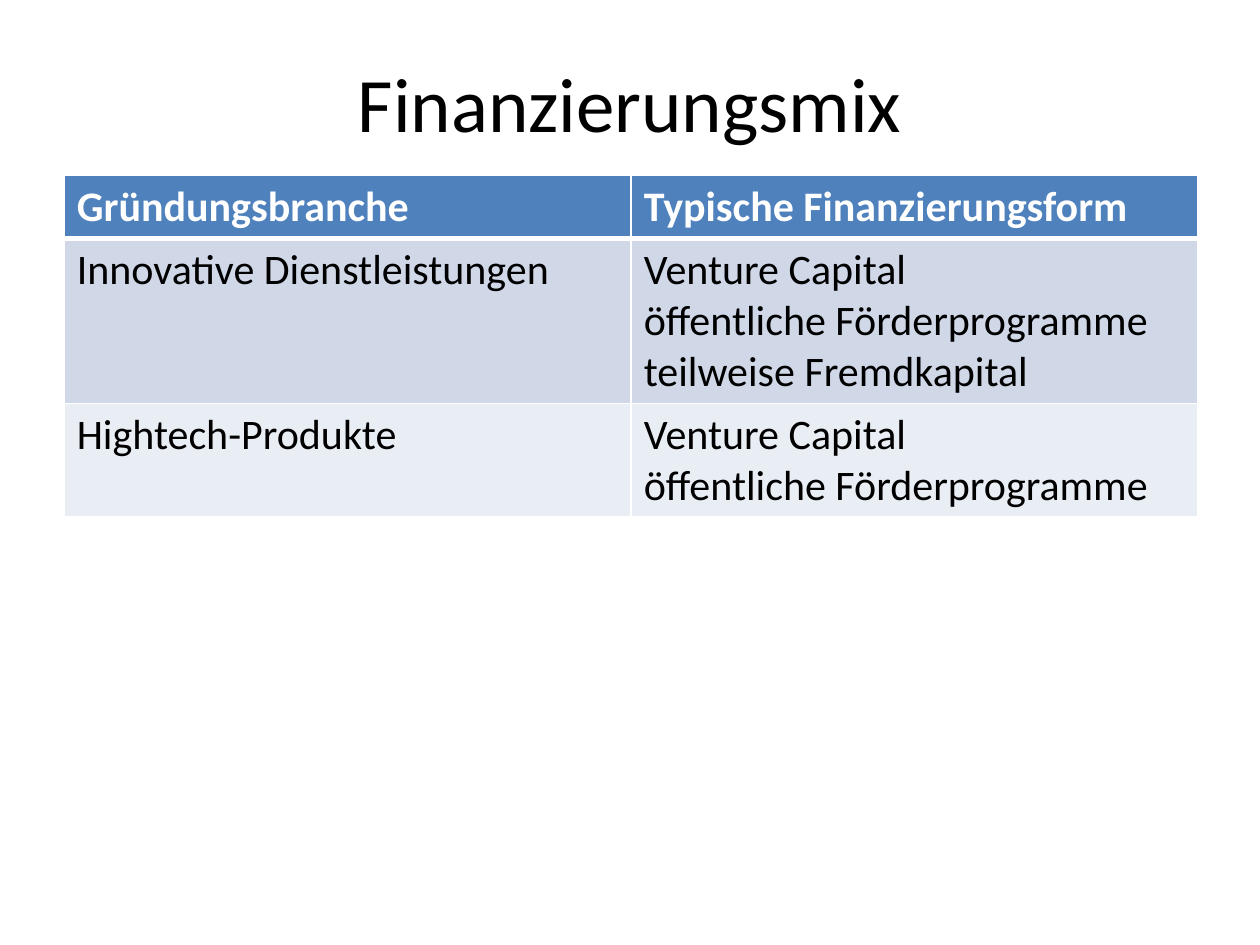
from dataclasses import dataclass

from lxml import etree
from pptx import Presentation, util as u
from pptx.dml.color import RGBColor
from pptx.enum import text
from pptx.oxml.ns import qn


@dataclass(frozen=True)
class Theme:
    font: str = "Calibri"
    title: int = 44
    body: int = 24
    dark: str = "000000"
    light: str = "FFFFFF"
    head: str = "4F81BD"
    bands: tuple = ("D0D8E8", "E9EDF4")
    thin: int = 1
    thick: int = 3


@dataclass(frozen=True)
class Row:
    branch: str
    forms: tuple
    height: float


THEME = Theme()
WIDE, HIGH = u.Inches(10), u.Inches(7.5)
ROWS = (
    Row("Gründungsbranche", ("Typische Finanzierungsform",), 0.49),
    Row(
        "Innovative Dienstleistungen",
        ("Venture Capital", "öffentliche Förderprogramme", "teilweise Fremdkapital"),
        1.31,
    ),
    Row("Hightech-Produkte", ("Venture Capital", "öffentliche Förderprogramme"), 0.9),
)


def style(frame, size: int, color: str, bold: bool = False) -> None:
    for para in frame.paragraphs:
        for run in para.runs:
            font = run.font
            font.name, font.size, font.bold = THEME.font, u.Pt(size), bold
            font.color.rgb = RGBColor.from_string(color)


def edge(cell, side: str, width: int) -> None:
    """Add one border; the sides must come in the order L, R, T, B."""
    props = cell._tc.get_or_add_tcPr()
    line = etree.SubElement(props, qn(f"a:ln{side}"), w=str(u.Pt(width)))
    fill = etree.SubElement(line, qn("a:solidFill"))
    etree.SubElement(fill, qn("a:srgbClr"), val=THEME.light)


def draw_title(slide, words: str) -> None:
    box = slide.shapes.add_textbox(
        int(WIDE * 0.05), int(HIGH * 0.04), int(WIDE * 0.9), u.Inches(1.01)
    )
    frame = box.text_frame
    frame.word_wrap = True
    frame.vertical_anchor = text.MSO_ANCHOR.MIDDLE
    frame.text = words
    frame.paragraphs[0].alignment = text.PP_ALIGN.CENTER
    style(frame, THEME.title, THEME.dark)


def draw_cell(cell, words: str, row: int) -> None:
    head = row == 0
    cell.text_frame.text = words
    style(cell.text_frame, THEME.body, THEME.light if head else THEME.dark, head)
    widths = {
        "L": THEME.thin,
        "R": THEME.thin,
        "T": THEME.thick if row == 1 else THEME.thin,
        "B": THEME.thick if head else THEME.thin,
    }
    for side, width in widths.items():
        edge(cell, side, width)
    band = THEME.head if head else THEME.bands[(row - 1) % len(THEME.bands)]
    cell.fill.solid()
    cell.fill.fore_color.rgb = RGBColor.from_string(band)


def draw_table(slide, rows: tuple[Row, ...]) -> None:
    high = u.Inches(sum(row.height for row in rows))
    table = slide.shapes.add_table(
        len(rows), 2, u.Inches(0.51), u.Inches(1.39), int(WIDE * 0.9), high
    ).table
    for i, row in enumerate(rows):
        table.rows[i].height = u.Inches(row.height)
        for j, words in enumerate((row.branch, "\n".join(row.forms))):
            draw_cell(table.cell(i, j), words, i)


def main() -> None:
    deck = Presentation()
    deck.slide_width, deck.slide_height = WIDE, HIGH
    slide = deck.slides.add_slide(deck.slide_layouts[6])
    draw_title(slide, "Finanzierungsmix")
    draw_table(slide, ROWS)
    deck.save("out.pptx")


if __name__ == "__main__":
    main()
